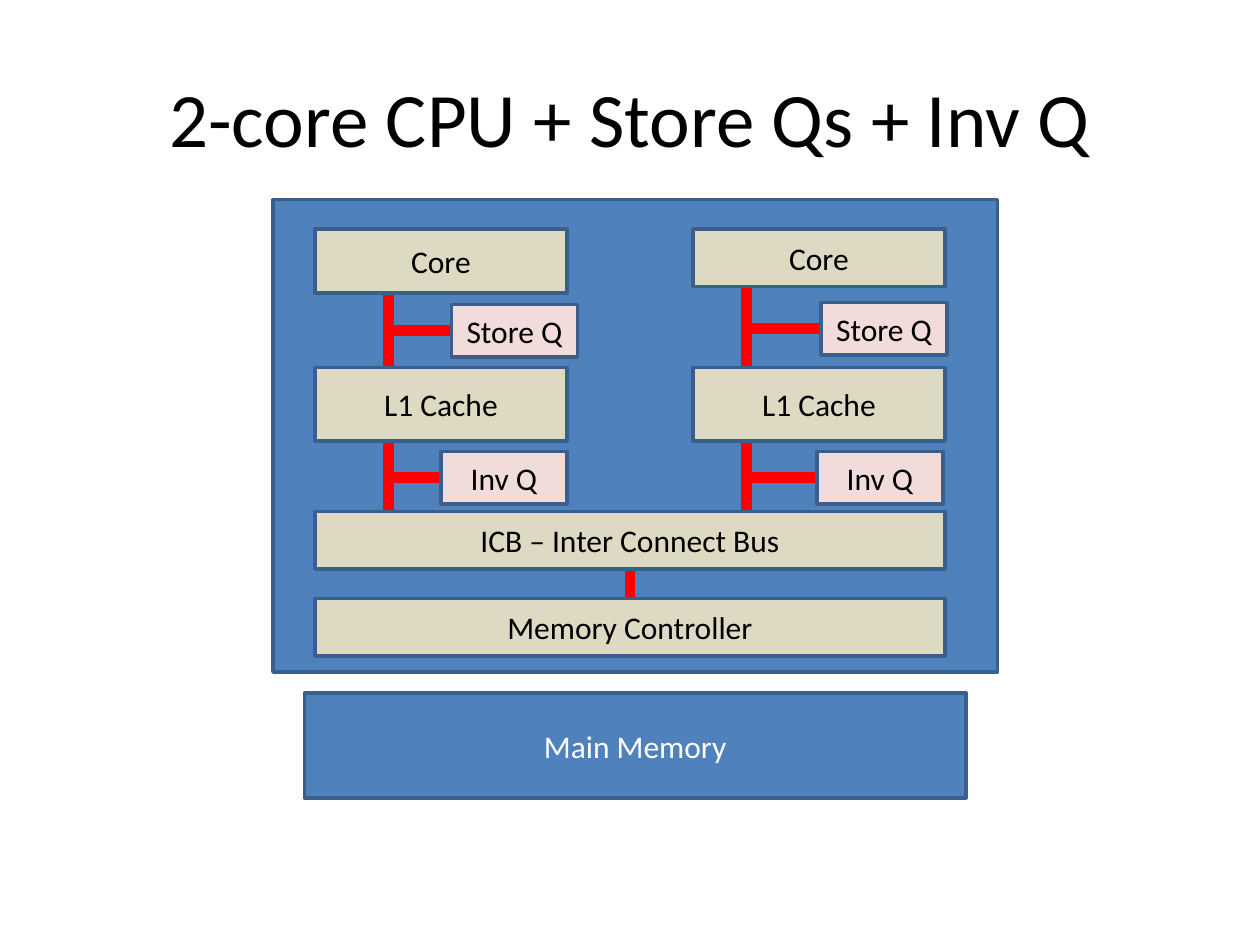
import dataclasses

import pptx
import pptx.dml.color
import pptx.enum.shapes
import pptx.enum.text
import pptx.oxml.ns
import pptx.util
from lxml import etree


@dataclasses.dataclass(frozen=True)
class Theme:
    font: str = "Calibri"
    title_size: int = 44
    label_size: int = 18
    outline_width: int = 2
    bus_width: int = 6
    text: str = "000000"
    light_text: str = "FFFFFF"
    chip: str = "4F81BD"
    unit: str = "DDD9C3"
    queue: str = "F2DCDB"
    outline: str = "3A5F8C"
    bus: str = "FF0000"


THEME = Theme()
COLS, ROWS = 120, 90  # slide grid, 12 cells to the inch
CORE_W = 24
QUEUE_W, QUEUE_H = 12, 5
BAR_H = 5.5


def grid(cells):
    return pptx.util.Inches(cells / 12)


def rgb(value):
    return pptx.dml.color.RGBColor.from_string(value)


def style_text(p, size, color):
    p.alignment = pptx.enum.text.PP_ALIGN.CENTER
    for r in p.runs:
        r.font.name = THEME.font
        r.font.size = pptx.util.Pt(size)
        r.font.color.rgb = rgb(color)


def add_block(s, box, fill, label="", color=THEME.text):
    sp = s.shapes.add_shape(pptx.enum.shapes.MSO_SHAPE.RECTANGLE, *map(grid, box))
    sp.shadow.inherit = False
    sp.fill.solid()
    sp.fill.fore_color.rgb = rgb(fill)
    sp.line.color.rgb = rgb(THEME.outline)
    sp.line.width = pptx.util.Pt(THEME.outline_width)
    if label:
        tf = sp.text_frame
        tf.text = label
        tf.vertical_anchor = pptx.enum.text.MSO_ANCHOR.MIDDLE
        style_text(tf.paragraphs[0], THEME.label_size, color)


def add_bus(s, x1, y1, x2, y2):
    line = s.shapes.add_connector(
        pptx.enum.shapes.MSO_CONNECTOR.STRAIGHT, *map(grid, (x1, y1, x2, y2)))
    line.line.color.rgb = rgb(THEME.bus)
    line.line.width = pptx.util.Pt(THEME.bus_width)
    etree.SubElement(line._element.spPr, pptx.oxml.ns.qn("a:effectLst"))


def add_title(s, text):
    tf = s.shapes.title.text_frame
    tf.text = text
    tf.vertical_anchor = pptx.enum.text.MSO_ANCHOR.MIDDLE
    style_text(tf.paragraphs[0], THEME.title_size, THEME.text)


def add_core(s, x, y, core_h, bus_dx, store, inv):
    """Core above its L1 cache, with queues at offsets store and inv off the bus."""
    bus_x = x + bus_dx
    add_bus(s, bus_x, y + core_h, bus_x, y + 28)
    add_block(s, (x, y, CORE_W, core_h), THEME.unit, "Core")
    add_block(s, (x, y + 13.2, CORE_W, 7), THEME.unit, "L1 Cache")
    for label, (dx, dy) in (("Store Q", store), ("Inv Q", inv)):
        mid = y + dy + QUEUE_H / 2
        add_bus(s, bus_x, mid, x + dx + 1, mid)
        add_block(s, (x + dx, y + dy, QUEUE_W, QUEUE_H), THEME.queue, label)


def add_cpu(s, x, y, w, h):
    add_block(s, (x, y, w, h), THEME.chip)
    left, right, top = x + 4, x + 40, y + 2.8
    add_core(s, left, top, 6.1, 7, store=(13, 7.2), inv=(12, 21.2))
    add_core(s, right, top, 5.5, 5.1, store=(12.2, 7), inv=(11.8, 21.2))
    bar_w = right + CORE_W - left
    icb_y, controller_y = y + 29.7, y + 38
    center = left + bar_w / 2
    add_bus(s, center, icb_y + BAR_H, center, controller_y)
    add_block(s, (left, icb_y, bar_w, BAR_H), THEME.unit, "ICB – Inter Connect Bus")
    add_block(s, (left, controller_y, bar_w, BAR_H), THEME.unit, "Memory Controller")


def main():
    prs = pptx.Presentation()
    prs.slide_width, prs.slide_height = grid(COLS), grid(ROWS)
    s = prs.slides.add_slide(prs.slide_layouts[5])
    add_title(s, "2-core CPU + Store Qs + Inv Q")
    add_cpu(s, 26, 19, 69, 45)
    add_block(s, (29, 66, 63, 10), THEME.chip, "Main Memory", THEME.light_text)
    prs.save("out.pptx")


if __name__ == "__main__":
    main()
